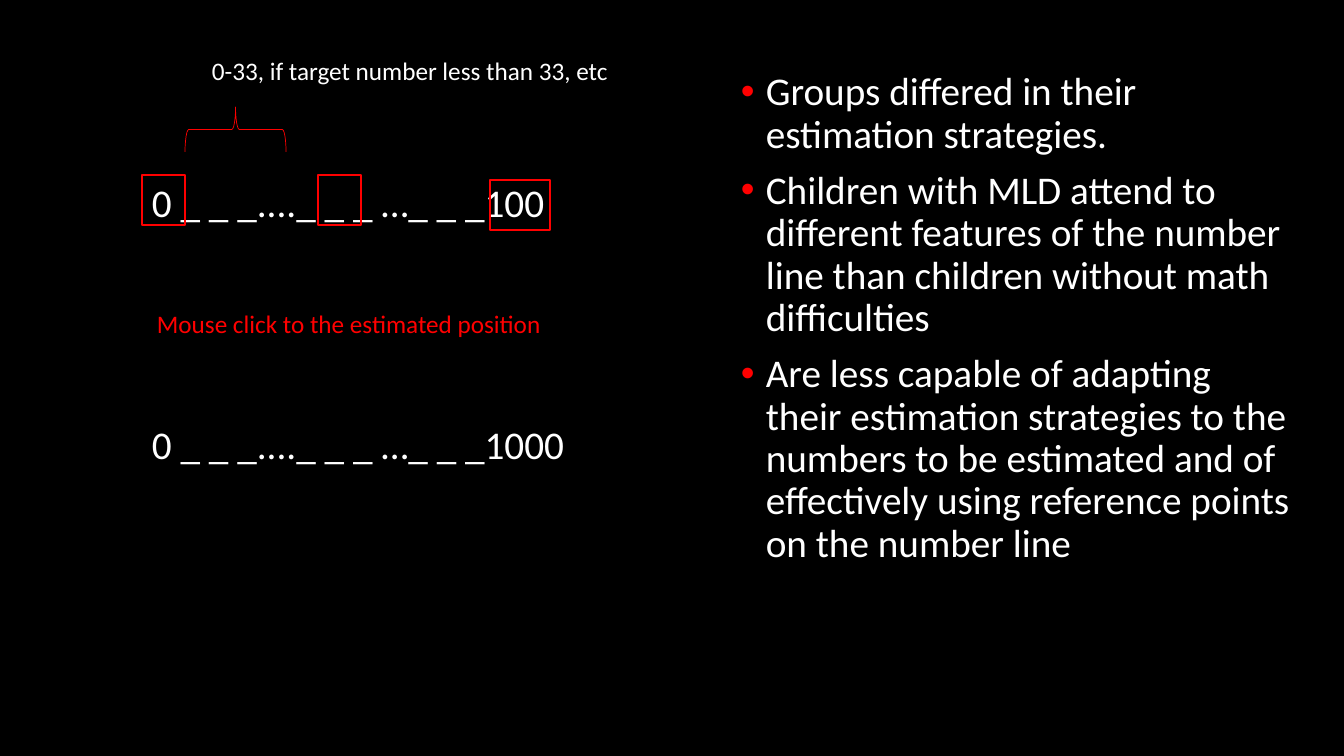
from lxml.etree import SubElement
from pptx import Presentation
from pptx.dml.color import RGBColor
from pptx.enum.shapes import MSO_SHAPE
from pptx.enum.text import MSO_AUTO_SIZE
from pptx.oxml.ns import qn
from pptx.util import Pt

COLORS = {"back": "000000", "text": "FFFFFF", "accent": "FF0000"}
EMU_PER_PX = 914400 / 100.8
BULLET_INDENT = 25
PARAGRAPH = {"line_spacing": 0.9, "space_before": Pt(10)}


def px(n):
    return round(n * EMU_PER_PX)


def rgb(name):
    return RGBColor.from_string(COLORS[name])


def apply(obj, formats):
    for name, value in formats.items():
        setattr(obj, name, value)


class NumberLineSlide:
    """Draws text, bullets and outlined shapes on one slide."""

    def __init__(self, prs):
        self.font = "Calibri"
        self.s = prs.slides.add_slide(prs.slide_layouts[6])
        fill = self.s.background.fill
        fill.solid()
        fill.fore_color.rgb = rgb("back")

    def run(self, p, text, size, color):
        r = p.add_run()
        r.text = text
        apply(r.font, {"name": self.font, "size": Pt(size)})
        r.font.color.rgb = rgb(color)

    def box(self, *at):
        return self.s.shapes.add_textbox(*map(px, at)).text_frame

    def label(self, at, text, size, color="text"):
        tf = self.box(*at)
        apply(tf, {"word_wrap": False, "auto_size": MSO_AUTO_SIZE.SHAPE_TO_FIT_TEXT})
        self.run(tf.paragraphs[0], text, size, color)

    def bullets(self, at, texts, size):
        tf = self.box(*at)
        tf.word_wrap = True
        for i, text in enumerate(texts):
            p = tf.add_paragraph() if i else tf.paragraphs[0]
            apply(p, PARAGRAPH)
            pPr = p._p.get_or_add_pPr()
            pPr.set("marL", str(px(BULLET_INDENT)))
            pPr.set("indent", str(-px(BULLET_INDENT)))
            color = SubElement(pPr, qn("a:buClr"))
            SubElement(color, qn("a:srgbClr"), val=COLORS["accent"])
            SubElement(pPr, qn("a:buFont"), typeface="Arial")
            SubElement(pPr, qn("a:buChar"), char="•")
            self.run(p, text, size, "text")

    def outline(self, kind, at, width, rotation=0):
        sp = self.s.shapes.add_shape(kind, *map(px, at))
        sp.fill.background()
        sp.line.color.rgb = rgb("accent")
        sp.line.width = Pt(width)
        sp.rotation = rotation
        sp.shadow.inherit = False


def main():
    prs = Presentation()
    apply(prs, {"slide_width": px(1344), "slide_height": px(756)})
    slide = NumberLineSlide(prs)
    slide.bullets((731, 67, 569, 615), [
        "Groups differed in their estimation strategies.",
        "Children with MLD attend to different features of the number line "
        "than children without math difficulties",
        "Are less capable of adapting their estimation strategies to the numbers "
        "to be estimated and of effectively using reference points on the number line",
    ], 28)
    for end, top, width in [("100", 173, 419), ("1000", 415, 438)]:
        slide.label((142, top, width, 57), "0 _ _ _...._ _ _ …_ _ _" + end, 28)
    slide.label((147, 303, 409, 40), "Mouse click to the estimated position", 18, "accent")
    for left, top, width in [(142, 175, 43), (318, 175, 43), (490, 180, 60)]:
        slide.outline(MSO_SHAPE.RECTANGLE, (left, top, width, 50), 1)
    slide.outline(MSO_SHAPE.LEFT_BRACE, (213, 79, 45, 101), 0.5, 90)
    slide.label((202, 50, 421, 40), "0-33, if target number less than 33, etc", 18)
    prs.save("out.pptx")


if __name__ == "__main__":
    main()
